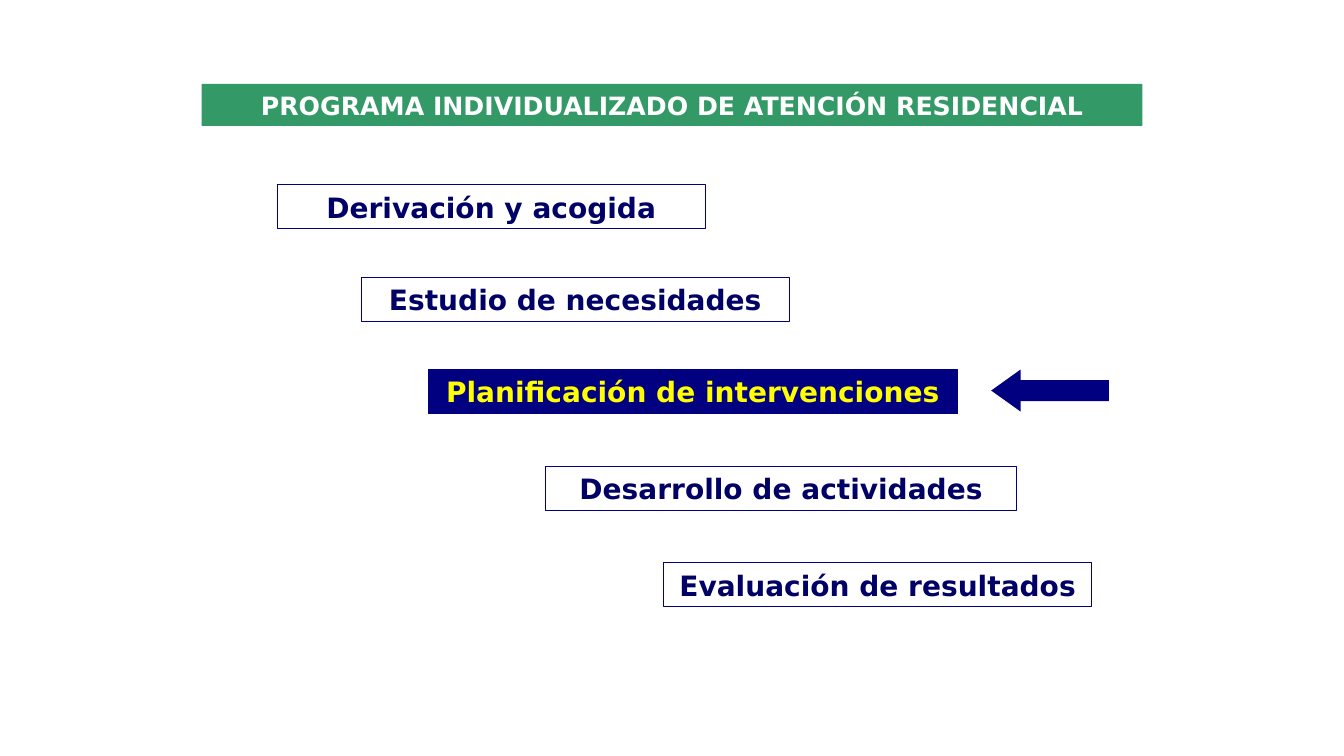
from dataclasses import dataclass

from pptx import Presentation
from pptx import util as u
from pptx.dml import color
from pptx.enum import shapes, text

COLOURS = {
    "navy": "000080",
    "ink": "000066",
    "yellow": "FFFF00",
    "green": "339966",
    "white": "FFFFFF",
}
SLIDE_WIDTH, SLIDE_HEIGHT = u.Inches(13.33), u.Inches(7.5)
COLUMNS, ROWS = 160, 90
STEP_HEIGHT = 5.25


@dataclass(frozen=True)
class Block:
    column: float
    row: float
    columns: float
    rows: float = STEP_HEIGHT
    label: str = ""
    fill: str | None = None
    line: str | None = None
    ink: str = "ink"
    size: int = 20
    kind: shapes.MSO_SHAPE = shapes.MSO_SHAPE.RECTANGLE
    fit: text.MSO_AUTO_SIZE = text.MSO_AUTO_SIZE.NONE


def step(column: float, row: float, columns: float, label: str,
         fill: str | None = None, ink: str = "ink") -> Block:
    return Block(column, row, columns, label=label, fill=fill, line="navy",
                 ink=ink, fit=text.MSO_AUTO_SIZE.SHAPE_TO_FIT_TEXT)


BLOCKS = [
    step(33, 22, 51, "Derivación y acogida"),
    step(43, 33, 51, "Estudio de necesidades"),
    step(51, 44, 63, "Planificación de intervenciones", "navy", "yellow"),
    step(65, 55.5, 56, "Desarrollo de actividades"),
    step(79, 67, 51, "Evaluación de resultados"),
    Block(118, 44, 14, 5, fill="navy", kind=shapes.MSO_SHAPE.LEFT_ARROW),
    Block(24, 10, 112, 5, "PROGRAMA INDIVIDUALIZADO DE ATENCIÓN RESIDENCIAL",
          fill="green", ink="white", size=18),
]


def rgb(name: str) -> color.RGBColor:
    return color.RGBColor.from_string(COLOURS[name])


def across(columns: float) -> int:
    return round(SLIDE_WIDTH * columns / COLUMNS)


def down(rows: float) -> int:
    return round(SLIDE_HEIGHT * rows / ROWS)


def set_format(target, values: dict) -> None:
    for name, value in values.items():
        setattr(target, name, value)


def paint(fill, name: str | None) -> None:
    if name is None:
        fill.background()
    else:
        fill.solid()
        fill.fore_color.rgb = rgb(name)


def draw_block(slide, block: Block):
    shape = slide.shapes.add_shape(
        block.kind, across(block.column), down(block.row),
        across(block.columns), down(block.rows))
    shape.shadow.inherit = False
    paint(shape.fill, block.fill)
    paint(shape.line.fill, block.line)
    if block.line:
        shape.line.width = u.Pt(0.75)
    if block.label:
        write_label(shape.text_frame, block)
    return shape


def write_label(frame, block: Block) -> None:
    set_format(frame, {
        "word_wrap": True,
        "auto_size": block.fit,
        "vertical_anchor": text.MSO_ANCHOR.MIDDLE,
    })
    paragraph = frame.paragraphs[0]
    paragraph.alignment = text.PP_ALIGN.CENTER
    run = paragraph.add_run()
    run.text = block.label
    set_format(run.font, {
        "name": "DejaVu Sans", "size": u.Pt(block.size), "bold": True,
    })
    run.font.color.rgb = rgb(block.ink)


def main() -> None:
    presentation = Presentation()
    set_format(presentation, {
        "slide_width": SLIDE_WIDTH, "slide_height": SLIDE_HEIGHT,
    })
    slide = presentation.slides.add_slide(presentation.slide_layouts[6])
    for block in BLOCKS:
        shape = draw_block(slide, block)
        if block.kind == shapes.MSO_SHAPE.LEFT_ARROW:
            shape.adjustments[0] = 0.5
            shape.adjustments[1] = 0.7
    presentation.save("out.pptx")


if __name__ == "__main__":
    main()
